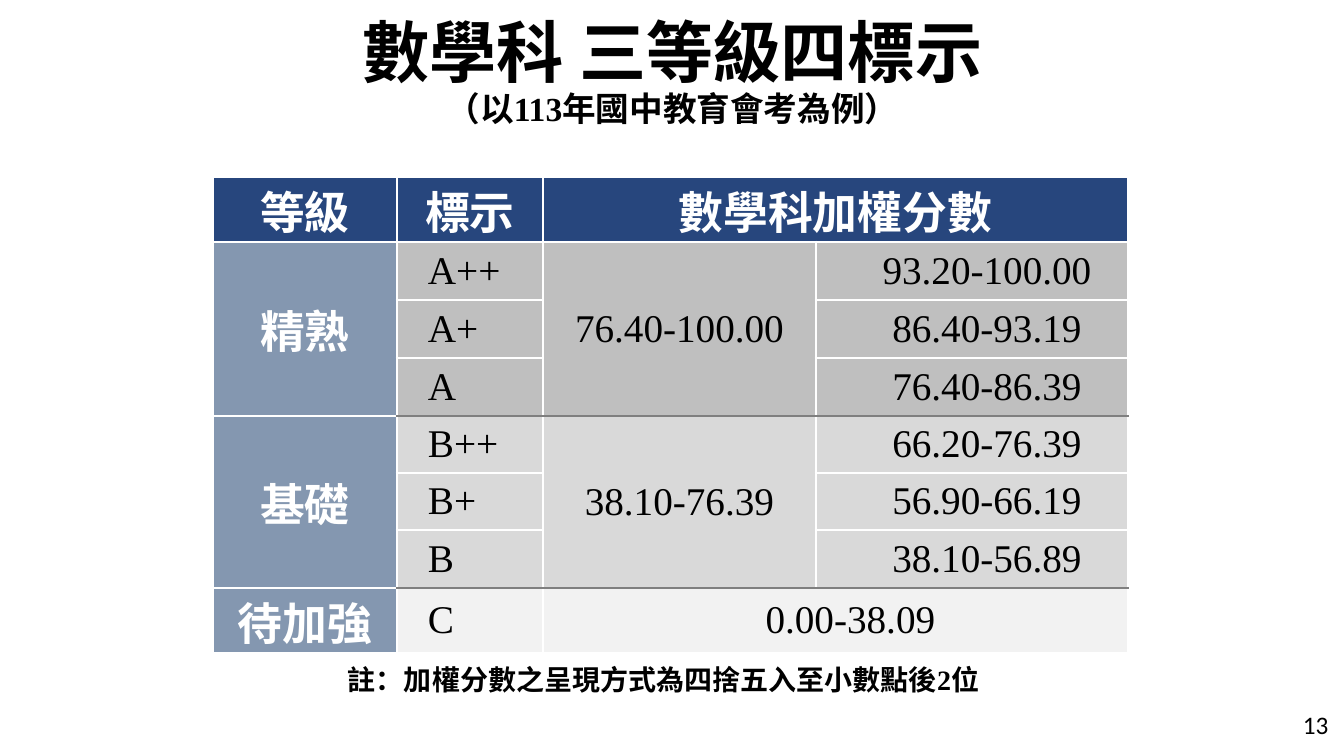
"""Build the slide on the three grades and four marks of the maths exam."""
from dataclasses import dataclass

from lxml.etree import SubElement
from pptx import Presentation
from pptx.dml.color import RGBColor as RGB
from pptx.enum.text import MSO_ANCHOR as Anchor, MSO_AUTO_SIZE as Fit, PP_ALIGN as Align
from pptx.oxml.ns import qn
from pptx.util import Emu, Pt

BLACK = RGB(0x00, 0x00, 0x00)
WHITE = RGB(0xFF, 0xFF, 0xFF)
NAVY = RGB(0x27, 0x46, 0x7D)
SLATE = RGB(0x84, 0x97, 0xB0)
RULE = RGB(0x7F, 0x7F, 0x7F)
DARK = RGB(0xBF, 0xBF, 0xBF)
MID = RGB(0xD9, 0xD9, 0xD9)
PALE = RGB(0xF2, 0xF2, 0xF2)

SERIF = "Times New Roman"
SANS = "Calibri"
HAN = "Noto Sans CJK SC"

COLS = (184, 146, 273, 312)
ROWS = (58, 58, 58, 58, 57, 57, 58, 58)


@dataclass
class Box:
    row: int
    col: int
    text: str
    fill: RGB
    rows: int = 1
    cols: int = 1
    left: int = 0
    dent: int = 0
    side: int = 2


@dataclass
class Grade:
    name: str
    range: str
    fill: RGB
    marks: tuple[tuple[str, str], ...]


GRADES = (
    Grade("精熟", "76.40-100.00", DARK,
          (("A++", "93.20-100.00"), ("A+", "86.40-93.19"), ("A", "76.40-86.39"))),
    Grade("基礎", "38.10-76.39", MID,
          (("B++", "66.20-76.39"), ("B+", "56.90-66.19"), ("B", "38.10-56.89"))),
    Grade("待加強", "0.00-38.09", PALE, (("C", ""),)),
)


def px(size: int) -> Emu:
    return Emu(round(size * 12192000 / 1344))


def style(run, size: int, face: str = SERIF, color: RGB = BLACK, bold: bool = False) -> None:
    font = run.font
    font.size, font.name, font.bold = Pt(size), face, bold
    font.color.rgb = color
    SubElement(run._r.get_or_add_rPr(), qn("a:ea"), typeface=HAN)


def edge(cell, side: str, color: RGB) -> None:
    line = SubElement(cell._tc.get_or_add_tcPr(), qn(f"a:ln{side}"), w=str(Pt(2.25)))
    fill = SubElement(line, qn("a:solidFill"))
    SubElement(fill, qn("a:srgbClr"), val=str(color))


def plan() -> tuple[list[Box], set[int]]:
    boxes = [Box(0, 0, "等級", NAVY), Box(0, 1, "標示", NAVY),
             Box(0, 2, "數學科加權分數", NAVY, cols=2)]
    rules = set()
    top = 1
    for grade in GRADES:
        count = len(grade.marks)
        single = count == 1
        boxes.append(Box(top, 0, grade.name, SLATE, rows=count))
        boxes.append(Box(top, 2, grade.range, grade.fill, rows=count,
                         cols=2 if single else 1, dent=30 if single else 0))
        for row, (mark, score) in enumerate(grade.marks, top):
            boxes.append(Box(row, 1, mark, grade.fill, left=29))
            if score:
                boxes.append(Box(row, 3, score, grade.fill, dent=30, side=7))
        top += count
        rules.add(top)
    return boxes, rules - {top}


def draw(table, box: Box, rules: set[int]) -> None:
    cell = table.cell(box.row, box.col)
    end = box.row + box.rows
    if box.rows * box.cols > 1:
        cell.merge(table.cell(end - 1, box.col + box.cols - 1))
    cell.margin_left = cell.margin_right = px(box.side)
    cell.margin_top = cell.margin_bottom = 0
    cell.vertical_anchor = Anchor.MIDDLE
    ruled = rules if box.col else set()
    for side, row in (("L", 0), ("R", 0), ("T", box.row), ("B", end)):
        edge(cell, side, RULE if row in ruled else WHITE)
    cell.fill.solid()
    cell.fill.fore_color.rgb = box.fill
    cell.text_frame.text = box.text
    para = cell.text_frame.paragraphs[0]
    para.alignment = Align.LEFT if box.left else Align.CENTER
    props = para._p.get_or_add_pPr()
    props.set("marL", str(px(box.left)))
    props.set("indent", str(px(box.dent)))
    head = box.fill in (NAVY, SLATE)
    style(para.runs[0], 32 if head else 28, color=WHITE if head else BLACK, bold=head)


def grid(slide) -> None:
    table = slide.shapes.add_table(len(ROWS), len(COLS), px(213), px(177),
                                   px(sum(COLS)), px(sum(ROWS))).table
    table.first_row = table.horz_banding = False
    for col, width in zip(table.columns, COLS):
        col.width = px(width)
    for row, height in zip(table.rows, ROWS):
        row.height = px(height)
    boxes, rules = plan()
    for box in boxes:
        draw(table, box, rules)


def title(slide) -> None:
    shape = slide.shapes.title
    shape.left, shape.top, shape.width, shape.height = px(93), px(1), px(1159), px(146)
    frame = shape.text_frame
    frame.text = "數學科 三等級四標示\v（以113年國中教育會考為例）"
    frame.auto_size = Fit.NONE
    frame.word_wrap = True
    frame.vertical_anchor = Anchor.MIDDLE
    para = frame.paragraphs[0]
    para.alignment = Align.CENTER
    para.line_spacing = 0.9
    main, sub = para.runs
    style(main, 48, HAN, bold=True)
    style(sub, 24, SERIF, bold=True)


def label(slide, text: str, area: tuple[int, int, int, int], size: int,
          face: str, bold: bool, anchor: Anchor) -> None:
    frame = slide.shapes.add_textbox(*map(px, area)).text_frame
    frame.text = text
    frame.word_wrap = True
    frame.vertical_anchor = anchor
    style(frame.paragraphs[0].runs[0], size, face, bold=bold)


def main() -> None:
    deck = Presentation()
    deck.slide_width, deck.slide_height = px(1344), px(756)
    slide = deck.slides.add_slide(deck.slide_layouts[5])
    title(slide)
    grid(slide)
    label(slide, "註：加權分數之呈現方式為四捨五入至小數點後2位",
          (338, 658, 837, 44), 20, SERIF, True, Anchor.TOP)
    label(slide, "13", (1293, 704, 57, 40), 18, SANS, False, Anchor.MIDDLE)
    deck.save("out.pptx")


if __name__ == "__main__":
    main()
